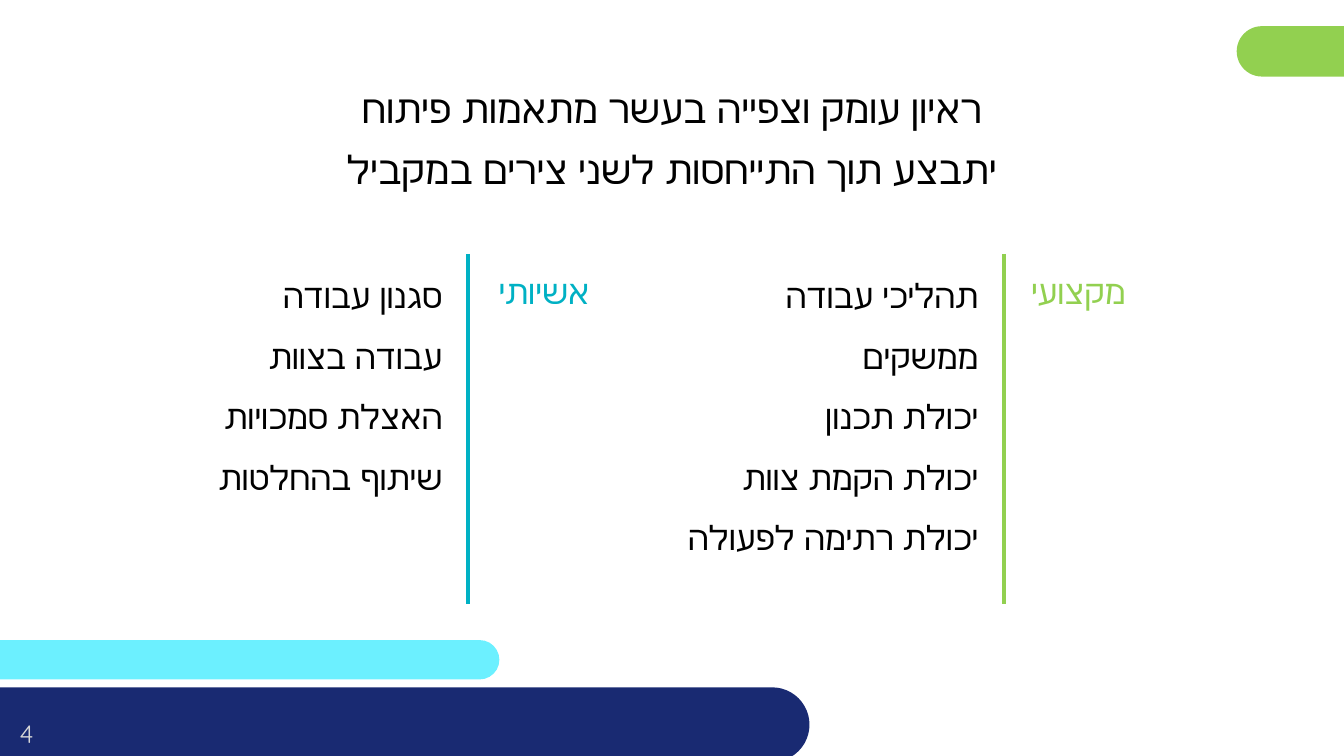
"""Build a Hebrew slide on the two parallel axes of an in-depth interview."""
from lxml import etree
from pptx import Presentation
from pptx.dml.color import RGBColor
from pptx.enum.shapes import MSO_CONNECTOR, MSO_SHAPE
from pptx.enum.text import MSO_ANCHOR, MSO_AUTO_SIZE, PP_ALIGN
from pptx.oxml.ns import qn
from pptx.util import Pt

CENTER, RIGHT = PP_ALIGN.CENTER, PP_ALIGN.RIGHT
MIDDLE, GROW = MSO_ANCHOR.MIDDLE, MSO_AUTO_SIZE.SHAPE_TO_FIT_TEXT
PILL, STRAIGHT = MSO_SHAPE.ROUNDED_RECTANGLE, MSO_CONNECTOR.STRAIGHT

THEME = {
    "font": "Quicksand",
    "title": 28, "body": 24, "number": 18,
    "black": "000000", "gray": "D8D8D8",
    "cyan": "6CF0FF", "green": "92D050", "navy": "192A72", "teal": "00B1C4",
}

TITLE = ["ראיון עומק וצפייה בעשר מתאמות פיתוח", "יתבצע תוך התייחסות לשני צירים במקביל"]
AXES = [
    ("מקצועי", "green", 717.1,
     ["תהליכי עבודה", "ממשקים", "יכולת תכנון", "יכולת הקמת צוות", "יכולת רתימה לפעולה"]),
    ("אשיותי", "teal", 334.3,
     ["סגנון עבודה", "עבודה בצוות", "האצלת סמכויות", "שיתוף בהחלטות"]),
]
PAGE_NUMBER = "4"
BARS = [
    ("cyan", (-18.7, 457.2, 375.4, 28.1)),
    ("green", (883.4, 18.7, 134.6, 36)),
    ("navy", (-30.2, 491, 608.4, 53.3)),
]
AXIS_TOP, AXIS_BOTTOM = 181.4, 431.3
LABEL_WIDTH, LABEL_HEIGHT = 105.1, 43.2
LIST_TOP, LIST_WIDTH, LIST_LINE = 178.6, 251.3, 44.4
AXIS_GAP = 11.2


def color(name):
    return RGBColor.from_string(THEME[name])


def add_bar(page, fill, place):
    bar = page.shapes.add_shape(PILL, *map(Pt, place))
    bar.adjustments[0] = 0.5
    bar.shadow.inherit = False
    bar.fill.solid()
    bar.fill.fore_color.rgb = color(fill)
    bar.line.fill.background()


def add_text(page, place, lines, size, tint, align=RIGHT, spacing=1.3, rtl=True):
    box = page.shapes.add_textbox(*map(Pt, place))
    frame = box.text_frame
    frame.word_wrap = True
    if rtl:
        frame.auto_size = GROW
    for index, line in enumerate(lines):
        para = frame.add_paragraph() if index else frame.paragraphs[0]
        para.alignment = align
        para.line_spacing = spacing
        if rtl:
            para._p.get_or_add_pPr().set("rtl", "1")
        span = para.add_run()
        span.text = line
        span.font.size = Pt(THEME[size])
        span.font.color.rgb = color(tint)
        span.font.name = THEME["font"]
        etree.SubElement(span._r.get_or_add_rPr(), qn("a:cs")).set("typeface", THEME["font"])
    return frame


def add_axis(page, label, tint, x, items):
    axis = page.shapes.add_connector(STRAIGHT, Pt(x), Pt(AXIS_TOP), Pt(x), Pt(AXIS_BOTTOM))
    axis.line.color.rgb = color(tint)
    axis.line.width = Pt(3)
    etree.SubElement(axis._element.spPr, qn("a:effectLst"))
    edge = x - AXIS_GAP
    add_text(page, (edge, AXIS_TOP, LABEL_WIDTH, LABEL_HEIGHT), [label], "body", tint)
    add_text(page, (edge - LIST_WIDTH, LIST_TOP, LIST_WIDTH, LIST_LINE * len(items)),
             items, "body", "black", spacing=1.5)


def main():
    deck = Presentation()
    deck.slide_width, deck.slide_height = Pt(960), Pt(540)
    page = deck.slides.add_slide(deck.slide_layouts[6])
    for fill, place in BARS:
        add_bar(page, fill, place)
    number = add_text(page, (-13, 503.3, 64.1, 41), [PAGE_NUMBER], "number", "gray",
                      CENTER, 1.0, rtl=False)
    number.vertical_anchor = MIDDLE
    add_text(page, (185.8, 46.8, 588.2, 92.9), TITLE, "title", "black", CENTER)
    for axis in AXES:
        add_axis(page, *axis)
    deck.save("out.pptx")


if __name__ == "__main__":
    main()
